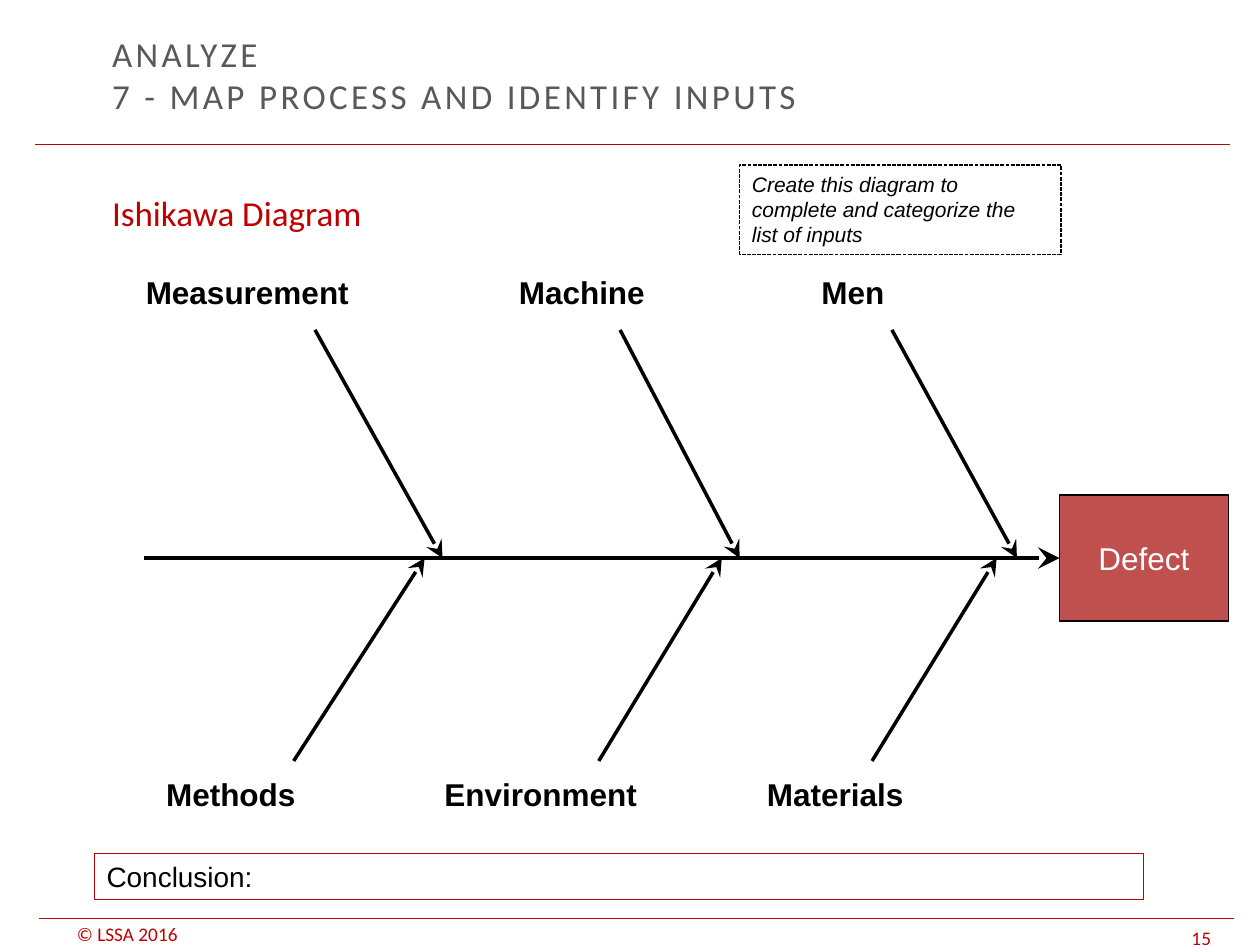
from lxml import etree
from pptx import Presentation
from pptx.dml.color import RGBColor
from pptx.enum.dml import MSO_LINE
from pptx.enum.shapes import MSO_CONNECTOR, MSO_SHAPE
from pptx.enum.text import MSO_ANCHOR, MSO_AUTO_SIZE, PP_ALIGN
from pptx.oxml.ns import qn
from pptx.util import Cm, Pt

RECTANGLE = MSO_SHAPE.RECTANGLE
STRAIGHT = MSO_CONNECTOR.STRAIGHT
TOP, MIDDLE, BOTTOM = MSO_ANCHOR.TOP, MSO_ANCHOR.MIDDLE, MSO_ANCHOR.BOTTOM
LEFT, CENTER = PP_ALIGN.LEFT, PP_ALIGN.CENTER
FIT_SHAPE = MSO_AUTO_SIZE.SHAPE_TO_FIT_TEXT
DASHED = MSO_LINE.SQUARE_DOT
LEFT_SIDE = 1

THEME = {
    "heading_font": "Calibri", "body_font": "Arial",
    "red": "C00000", "grey": "595959", "black": "000000",
    "white": "FFFFFF", "defect": "C0504D",
    "title": 20, "label": 18, "conclusion": 16, "note": 12, "footer": 11,
    "thin": 0.75, "bone": 2, "spine": 2.5,
}

# Content: all lengths in centimetres
TITLE = ("ANALYZE", "7 - MAP PROCESS AND IDENTIFY INPUTS")
SUBTITLE = "Ishikawa Diagram"
NOTE = "Create this diagram to complete and categorize the list of inputs"
EFFECT = "Defect"
CONCLUSION = "Conclusion:"
COPYRIGHT = "© LSSA 2016"
PAGE = "15"
RULES = [(0.71, 2.92), (0.79, 18.52)]  # left, top
RULE_LENGTH = 24.08
EFFECT_BOX = (21.36, 9.98, 3.4, 2.54)
SPINE_START = 2.9
SPINE_Y = EFFECT_BOX[1] + EFFECT_BOX[3] / 2

# Each cause: name, label left, label width, bone start x, bone end x
BRANCHES = [
    {"label_top": 5.38, "bone_start": 6.65, "causes": [
        ("Measurement", 2.69, 4.7, 6.35, 8.92),
        ("Machine", 10.21, 3.2, 12.5, 14.91),
        ("Men", 16.31, 1.9, 17.98, 20.5)]},
    {"label_top": 15.5, "bone_start": 15.34, "causes": [
        ("Methods", 3.1, 3.25, 5.92, 8.56),
        ("Environment", 8.71, 4.5, 12.07, 14.55),
        ("Materials", 15.21, 3.4, 17.58, 20.09)]},
]
LABEL_HEIGHT = 1.02


def color(name):
    return RGBColor.from_string(THEME[name])


def write(shape, lines, *, size, font="body_font", ink="black", bold=False,
          italic=False, align=LEFT, anchor=TOP, wrap=True, fit=False,
          spacing=None, flat=False, right_margin=0.25):
    frame = shape.text_frame
    frame.word_wrap = wrap
    frame.vertical_anchor = anchor
    frame.margin_right = Cm(right_margin)
    if fit:
        frame.auto_size = FIT_SHAPE
    if flat:
        frame.margin_top = frame.margin_bottom = 0
    paragraph = frame.paragraphs[0]
    paragraph.alignment = align
    for number, line in enumerate([lines] if isinstance(lines, str) else lines):
        if number:
            paragraph.add_line_break()
        run = paragraph.add_run()
        run.text = line
        run.font.name = THEME[font]
        run.font.size = Pt(THEME[size])
        run.font.color.rgb = color(ink)
        run.font.bold = bold
        run.font.italic = italic
        if spacing:
            run.font._element.set("spc", str(round(spacing * 100)))


def add_text(slide, box, lines, **style):
    write(slide.shapes.add_textbox(*map(Cm, box)), lines, **style)


def add_box(slide, box, lines, *, outline="black", fill=None, dash=None, **style):
    shape = slide.shapes.add_shape(RECTANGLE, *map(Cm, box))
    shape.shadow.inherit = False
    if fill:
        shape.fill.solid()
        shape.fill.fore_color.rgb = color(fill)
    else:
        shape.fill.background()
    shape.line.color.rgb = color(outline)
    shape.line.width = Pt(THEME["thin"])
    if dash:
        shape.line.dash_style = dash
    write(shape, lines, **style)
    return shape


def add_line(slide, start, end, *, weight, ink="black", arrow=False):
    line = slide.shapes.add_connector(STRAIGHT, *map(Cm, start + end))
    line.line.color.rgb = color(ink)
    line.line.width = Pt(THEME[weight])
    properties = line._element.spPr
    if arrow:
        etree.SubElement(properties.find(qn("a:ln")), qn("a:tailEnd"),
                         type="stealth", w="lg", len="lg")
    etree.SubElement(properties, qn("a:effectLst"))
    return line


def main():
    deck = Presentation()
    deck.slide_width, deck.slide_height = Cm(25.4), Cm(19.05)
    slide = deck.slides.add_slide(deck.slide_layouts[6])

    # Footer and rules
    footer = dict(size="footer", font="heading_font", ink="red", anchor=BOTTOM, flat=True)
    add_text(slide, (1.3, 18.59, 3.61, 0.46), COPYRIGHT, **footer)
    add_text(slide, (23.77, 18.57, 1.63, 0.56), PAGE, **footer)
    for left, top in RULES:
        add_line(slide, (left, top), (left + RULE_LENGTH, top), weight="thin", ink="red")

    # Headings
    add_text(slide, (2.01, 0.66, 18.01, 1.68), TITLE, size="title",
             font="heading_font", ink="grey", anchor=MIDDLE, spacing=1.9)
    add_text(slide, (2.01, 3.73, 22, 14), SUBTITLE, size="title",
             font="heading_font", ink="red")

    # Effect and spine
    effect = add_box(slide, EFFECT_BOX, EFFECT, fill="defect", size="label",
                     ink="white", align=CENTER, anchor=MIDDLE)
    spine = add_line(slide, (SPINE_START, SPINE_Y), (EFFECT_BOX[0], SPINE_Y),
                     weight="spine", arrow=True)
    spine.end_connect(effect, LEFT_SIDE)

    # Causes and their bones
    for branch in BRANCHES:
        for cause, left, width, start_x, end_x in branch["causes"]:
            add_line(slide, (start_x, branch["bone_start"]), (end_x, SPINE_Y),
                     weight="bone", arrow=True)
            add_text(slide, (left, branch["label_top"], width, LABEL_HEIGHT), cause,
                     size="label", bold=True, wrap=False, fit=True)

    # Conclusion and note
    add_box(slide, (1.9, 17.2, 21.16, 0.94), CONCLUSION, outline="red",
            size="conclusion", fit=True)
    add_box(slide, (14.91, 3.33, 6.48, 1.8), NOTE, dash=DASHED,
            size="note", italic=True, fit=True, right_margin=0.6)

    deck.save("out.pptx")


if __name__ == "__main__":
    main()
